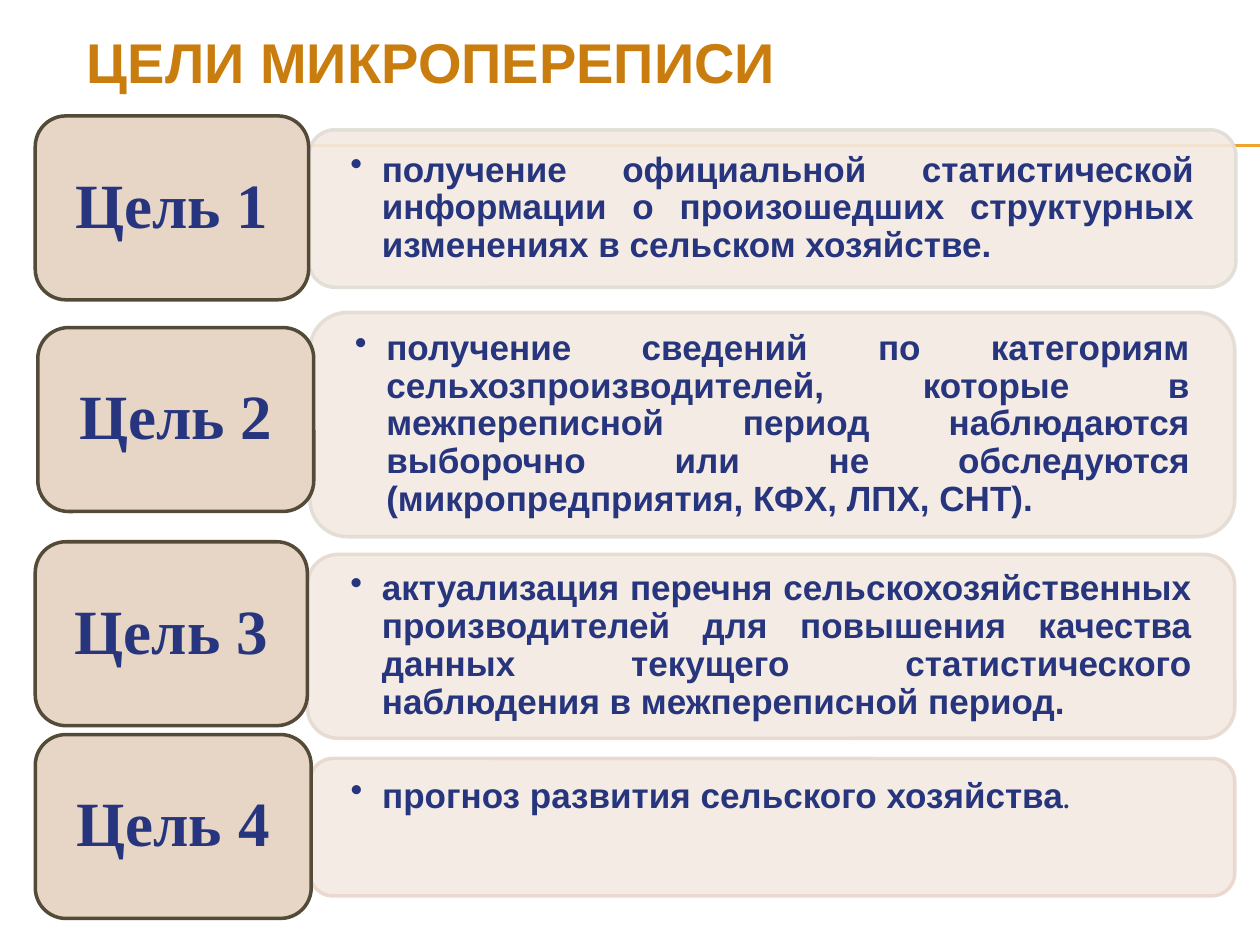
from dataclasses import dataclass

import pptx
import pptx.dml.color
import pptx.enum.shapes
import pptx.enum.text
import pptx.oxml.ns
import pptx.util
from lxml import etree
from pptx.util import Inches

ALIGN = pptx.enum.text.PP_ALIGN
ANCHOR = pptx.enum.text.MSO_ANCHOR
qn = pptx.oxml.ns.qn


@dataclass(frozen=True)
class Theme:
    title: str = "C87D0E"
    rule: str = "F0A22E"
    text: str = "26357D"
    panel: str = "F3EAE2"
    label: str = "E7D6C5"
    label_line: str = "534B38"
    sans: str = "Arial"
    serif: str = "Times New Roman"
    title_size: int = 32
    label_size: int = 36
    body_size: int = 20
    dot_size: int = 14
    panel_opacity: int = 90


THEME = Theme()

# label, its (left, top, width), panel (left, top, width, height), panel line, text
GOALS = [
    ("Цель 1", (0.28, 0.92, 2.17), (2.45, 1.03, 7.36, 1.25), "E0DDD6",
     "получение официальной статистической информации о произошедших "
     "структурных изменениях в сельском хозяйстве."),
    ("Цель 2", (0.3, 2.6, 2.19), (2.46, 2.48, 7.34, 1.78), "E3DCD3",
     "получение сведений по категориям сельхозпроизводителей, которые в "
     "межпереписной период наблюдаются выборочно или не обследуются "
     "(микропредприятия, КФХ, ЛПХ, СНТ)."),
    ("Цель 3", (0.28, 4.3, 2.16), (2.44, 4.4, 7.36, 1.46), "E6DAD0",
     "актуализация перечня сельскохозяйственных производителей для повышения "
     "качества данных текущего статистического наблюдения в межпереписной период."),
    ("Цель 4", (0.28, 5.83, 2.19), (2.46, 6.02, 7.34, 1.09), "E9D6CD",
     "прогноз развития сельского хозяйства"),
]
LABEL_HEIGHT = 1.46


def rgb(color):
    return pptx.dml.color.RGBColor.from_string(color)


def add_span(para, text, size, font, color=THEME.text, bold=True):
    span = para.add_run()
    span.text = text
    span.font.size = pptx.util.Pt(size)
    span.font.name = font
    span.font.bold = bold
    span.font.color.rgb = rgb(color)


def set_opacity(fill, percent):
    for color in fill.iter(qn("a:srgbClr")):
        etree.SubElement(color, qn("a:alpha")).set("val", str(percent * 1000))


def set_insets(frame, side, top):
    frame.margin_left = frame.margin_right = Inches(side)
    frame.margin_top = frame.margin_bottom = Inches(top)


def add_rounded_box(page, place, fill, line, side, top):
    """Add a rounded rectangle and return it with its first paragraph."""
    box = page.shapes.add_shape(
        pptx.enum.shapes.MSO_SHAPE.ROUNDED_RECTANGLE, *map(Inches, place))
    box.shadow.inherit = False
    box.fill.solid()
    box.fill.fore_color.rgb = rgb(fill)
    box.line.color.rgb = rgb(line)
    box.line.width = pptx.util.Pt(2)
    frame = box.text_frame
    frame.word_wrap = True
    frame.vertical_anchor = ANCHOR.MIDDLE
    set_insets(frame, side, top)
    para = frame.paragraphs[0]
    para.line_spacing = 0.9
    return box, para


def add_bullet(para, indent):
    properties = para._p.get_or_add_pPr()
    properties.set("marL", str(Inches(indent)))
    properties.set("indent", str(-Inches(indent)))
    etree.SubElement(properties, qn("a:buChar")).set("char", "•")


def add_panel(page, place, line, text):
    box, para = add_rounded_box(page, place, THEME.panel, line, 0.27, 0.14)
    set_opacity(box._element.spPr, THEME.panel_opacity)
    para.alignment = ALIGN.JUSTIFY
    add_bullet(para, 0.25)
    add_span(para, text, THEME.body_size, THEME.sans)
    return box, para


def add_label(page, place, text):
    box, para = add_rounded_box(
        page, (*place, LABEL_HEIGHT), THEME.label, THEME.label_line, 0.15, 0.07)
    para.alignment = ALIGN.CENTER
    add_span(para, text, THEME.label_size, THEME.serif)


def add_rule(page, y):
    rule = page.shapes.add_connector(
        pptx.enum.shapes.MSO_CONNECTOR.STRAIGHT,
        Inches(0.56), Inches(y), Inches(10), Inches(y))
    rule.line.color.rgb = rgb(THEME.rule)
    rule.line.width = pptx.util.Pt(0.75)
    etree.SubElement(rule._element.spPr, qn("a:effectLst"))


def set_title(page, text):
    title = page.shapes.title
    title.left, title.top = Inches(0.59), Inches(0.13)
    title.width, title.height = Inches(8.62), Inches(0.71)
    frame = title.text_frame
    frame.auto_size = pptx.enum.text.MSO_AUTO_SIZE.NONE
    frame.vertical_anchor = ANCHOR.MIDDLE
    para = frame.paragraphs[0]
    para.alignment = ALIGN.LEFT
    add_span(para, text, THEME.title_size, THEME.sans, THEME.title)


def main():
    deck = pptx.Presentation()
    deck.slide_width, deck.slide_height = Inches(10), Inches(7.5)
    page = deck.slides.add_slide(deck.slide_layouts[5])
    set_title(page, "ЦЕЛИ МИКРОПЕРЕПИСИ")
    for y in (1.15, 1.16):
        add_rule(page, y)
    for label, label_place, panel_place, line, text in GOALS:
        panel, para = add_panel(page, panel_place, line, text)
        add_label(page, label_place, label)

    # The short last goal sits at the top of its panel and ends in a small dot.
    para.alignment = ALIGN.LEFT
    panel.text_frame.vertical_anchor = ANCHOR.TOP
    set_insets(panel.text_frame, 0.27, 0.1)
    add_span(para, ".", THEME.dot_size, THEME.serif)
    deck.save("out.pptx")


if __name__ == "__main__":
    main()
